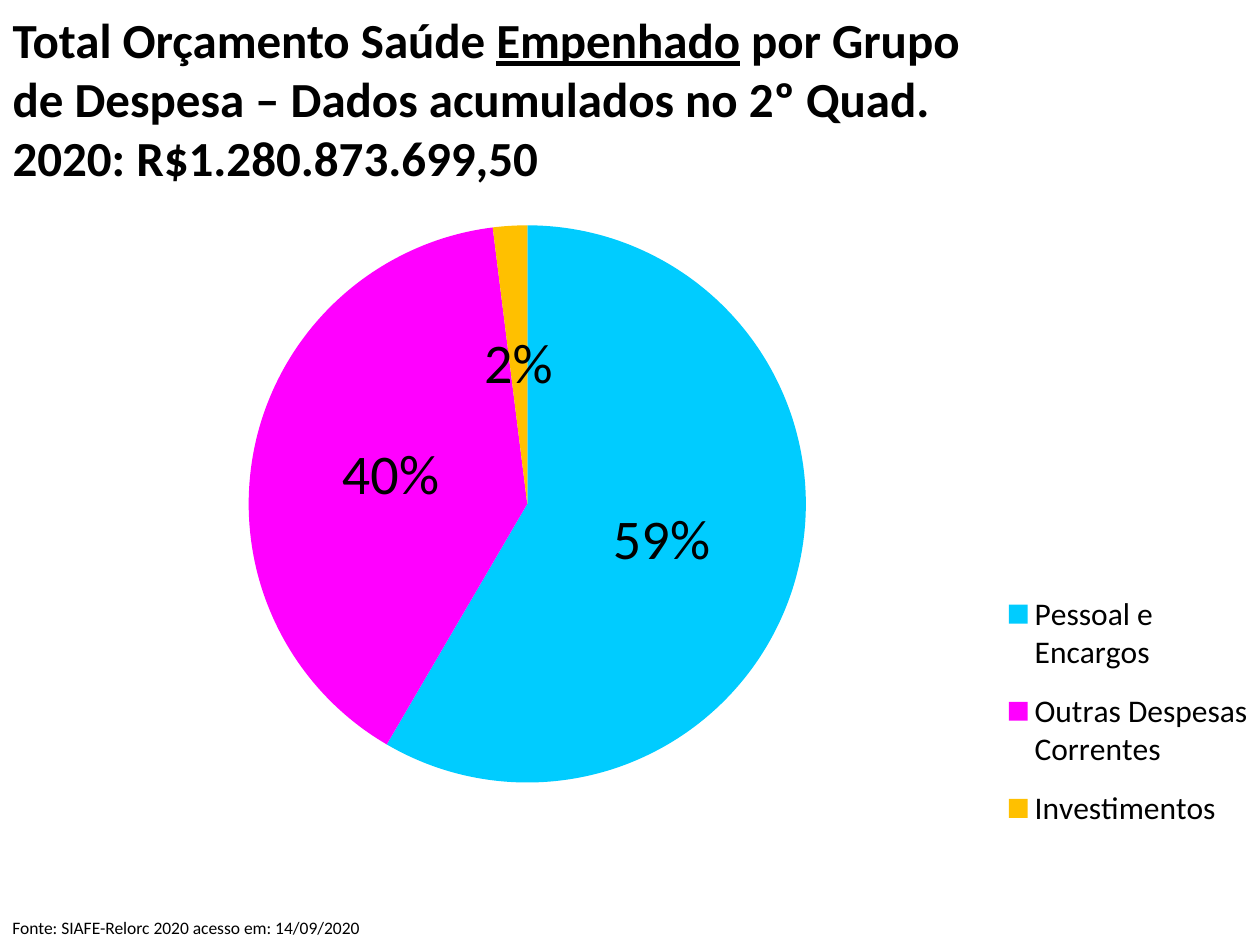
"""Build the slide on committed health spending by expense group."""
import pptx
import pptx.chart.data
import pptx.dml.color
import pptx.enum.chart
import pptx.enum.text
import pptx.oxml
import pptx.oxml.ns
import pptx.util
from pptx.util import Inches

FONT = "Calibri"
COLOURS = {"text": "000000", "back": "FFFFFF"}
TITLE = [
    ("Total Orçamento Saúde ", False),
    ("Empenhado", True),
    (" por Grupo de Despesa – Dados acumulados no 2º Quad. 2020: R$1.280.873.699,50", False),
]
SOURCE = "Fonte: SIAFE-Relorc 2020 acesso em: 14/09/2020"
GROUPS = [
    ("Pessoal e Encargos", 59, "00CCFF"),
    ("Outras Despesas Correntes", 40, "FF00FF"),
    ("Investimentos", 2, "FFC000"),
]
PLOT_LAYOUT = (0.035, 0.031, 0.767, 0.813)
LEGEND_LAYOUT = (0.795, 0.54, 0.205, 0.4)


def colour(name):
    return pptx.dml.color.RGBColor.from_string(COLOURS.get(name, name))


def style(font, size, bold=False):
    font.name = FONT
    font.size = pptx.util.Pt(size)
    font.bold = bold
    font.color.rgb = colour("text")


def make_layout(fractions, inner=False):
    target = '<c:layoutTarget val="inner"/>' if inner else ""
    modes = "".join(f'<c:{axis}Mode val="edge"/>' for axis in "xy")
    sizes = "".join(f'<c:{key} val="{part}"/>' for key, part in zip("xywh", fractions))
    return pptx.oxml.parse_xml(
        f'<c:layout {pptx.oxml.ns.nsdecls("c")}><c:manualLayout>'
        f"{target}{modes}{sizes}</c:manualLayout></c:layout>"
    )


def add_source(page):
    box = page.shapes.add_textbox(Inches(0), Inches(7.23), Inches(5.05), Inches(0.27))
    box.text_frame.word_wrap = True
    box.text_frame.text = SOURCE
    style(box.text_frame.paragraphs[0].runs[0].font, 10)


def add_title(page):
    title = page.shapes.title
    title.left, title.top = Inches(0), Inches(0)
    title.width, title.height = Inches(7.83), Inches(1.55)
    title.fill.solid()
    title.fill.fore_color.rgb = colour("back")
    title.text_frame.vertical_anchor = pptx.enum.text.MSO_ANCHOR.MIDDLE
    para = title.text_frame.paragraphs[0]
    para.alignment = pptx.enum.text.PP_ALIGN.LEFT
    for words, underlined in TITLE:
        span = para.add_run()
        span.text = words
        style(span.font, 28, bold=True)
        span.font.underline = underlined


def add_pie(page):
    names, values, fills = zip(*GROUPS)
    data = pptx.chart.data.CategoryChartData()
    data.categories = names
    data.add_series("Series 1", values)
    chart = page.shapes.add_chart(
        pptx.enum.chart.XL_CHART_TYPE.PIE,
        Inches(0), Inches(1.62), Inches(10), Inches(5.44), data,
    ).chart
    chart.has_title = False
    style(chart.font, 10)

    chart.has_legend = True
    legend = chart.legend
    legend.position = pptx.enum.chart.XL_LEGEND_POSITION.RIGHT
    legend.include_in_layout = False
    style(legend.font, 18)

    plot = chart.plots[0]
    plot.vary_by_categories = True
    for index, fill in enumerate(fills):
        point = plot.series[0].points[index]
        point.format.fill.solid()
        point.format.fill.fore_color.rgb = colour(fill)
    plot.has_data_labels = True
    labels = plot.data_labels
    labels.show_value = True
    labels.number_format = '0"%"'
    labels.number_format_is_linked = False
    labels.position = pptx.enum.chart.XL_LABEL_POSITION.CENTER
    style(labels.font, 32)

    area = chart.element.chart.plotArea
    for old in area.findall(pptx.oxml.ns.qn("c:layout")):
        area.remove(old)
    area.insert(0, make_layout(PLOT_LAYOUT, inner=True))
    legend_element = chart.element.chart.find(pptx.oxml.ns.qn("c:legend"))
    for old in legend_element.findall(pptx.oxml.ns.qn("c:layout")):
        legend_element.remove(old)
    legend_element.insert(1, make_layout(LEGEND_LAYOUT))


def main():
    deck = pptx.Presentation()
    deck.slide_width, deck.slide_height = Inches(10), Inches(7.5)
    page = deck.slides.add_slide(deck.slide_layouts[5])
    page.background.fill.solid()
    page.background.fill.fore_color.rgb = colour("back")
    add_source(page)
    add_title(page)
    add_pie(page)
    deck.save("out.pptx")


if __name__ == "__main__":
    main()
